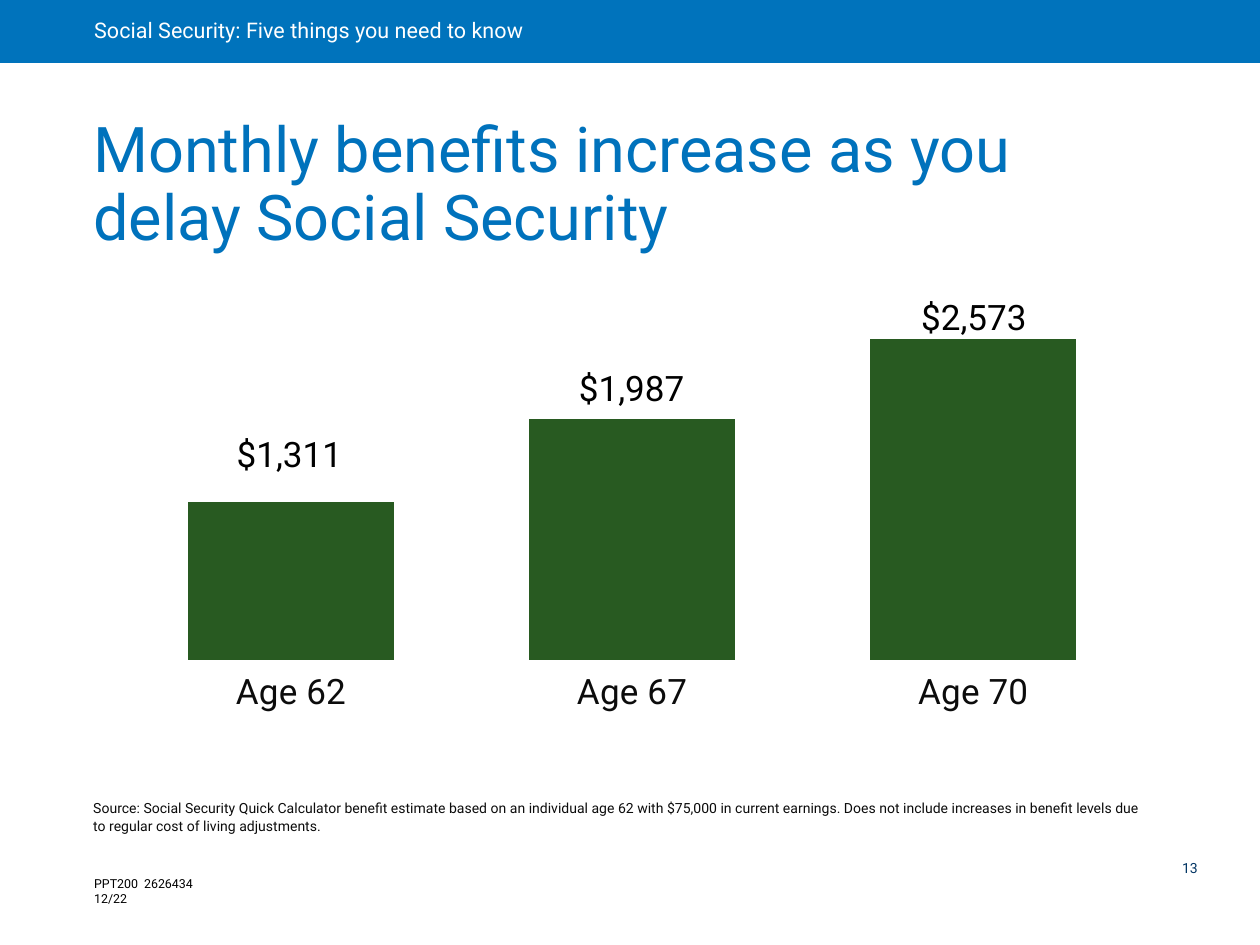
from pptx import Presentation
from pptx.chart.data import CategoryChartData as ChartData
from pptx.dml.color import RGBColor
from pptx.enum.chart import XL_CHART_TYPE as Kind, XL_TICK_LABEL_POSITION as Label, XL_TICK_MARK as Tick
from pptx.enum.shapes import MSO_SHAPE as Shape
from pptx.enum.text import MSO_ANCHOR as Anchor, PP_ALIGN as Align
from pptx.oxml import parse_xml
from pptx.oxml.ns import nsdecls, qn
from pptx.util import Cm, Pt

FACE = "Roboto"


def paint(fmt, hue):
    """Set a colour from a hex string."""
    fmt.rgb = RGBColor.from_string(hue)


def style(font, size, hue):
    """Set the face, size and colour of a font."""
    font.name, font.size = FACE, Pt(size)
    paint(font.color, hue)


def write(frame, lines, size, hue, pads, anchor=Anchor.TOP, align=Align.LEFT, lead=1.0):
    """Fill a text frame with one paragraph, broken into lines."""
    frame.word_wrap, frame.vertical_anchor = True, anchor
    frame.margin_left, frame.margin_top, frame.margin_right, frame.margin_bottom = map(Cm, pads)
    para = frame.paragraphs[0]
    para.alignment, para.line_spacing = align, lead
    for i, line in enumerate(lines):
        if i:
            para.add_line_break()
        run = para.add_run()
        run.text = line
        style(run.font, size, hue)


def note(slide, box, lines, size, hue, pads=(0.25, 0.13, 0.25, 0.13), **look):
    """Add a text box."""
    area = slide.shapes.add_textbox(*map(Cm, box))
    write(area.text_frame, lines, size, hue, pads, **look)


def banner(slide, box):
    """Draw the top band with the talk title."""
    band = slide.shapes.add_shape(Shape.RECTANGLE, *map(Cm, box))
    band.shadow.inherit = False
    band.fill.solid()
    paint(band.fill.fore_color, "0073BC")
    band.line.fill.background()
    write(band.text_frame, ["Social Security: Five things you need to know"], 12.3, "FFFFFF",
          (1.9, 0, 0.56, 0), anchor=Anchor.MIDDLE, lead=0.9)


def place(chart, **spot):
    """Fix the inner plot area as fractions of the chart."""
    plot = chart._chartSpace.find(qn("c:chart")).find(qn("c:plotArea"))
    for old in plot.findall(qn("c:layout")):
        plot.remove(old)
    parts = "".join(f'<c:{key} val="{val}"/>' for key, val in spot.items())
    plot.insert(0, parse_xml(
        f'<c:layout {nsdecls("c")}><c:manualLayout><c:layoutTarget val="inner"/>'
        f'<c:xMode val="edge"/><c:yMode val="edge"/>{parts}</c:manualLayout></c:layout>'))


def bars(slide, box):
    """Draw the benefit columns by claiming age and their amounts."""
    data = ChartData()
    data.categories = ["Age 62", "Age 67", "Age 70"]
    data.add_series("Series 1", (49, 75, 100))
    chart = slide.shapes.add_chart(Kind.COLUMN_STACKED, *map(Cm, box), data).chart
    chart.has_legend = chart.has_title = False
    style(chart.font, 14, "003463")
    chart.font.name = "TeX Gyre Schola"
    plot = chart.plots[0]
    plot.gap_width, plot.overlap, plot.vary_by_categories = 66, 100, False
    fill = plot.series[0].format.fill
    fill.solid()
    paint(fill.fore_color, "285A21")
    ages, sums = chart.category_axis, chart.value_axis
    for axis in (ages, sums):
        axis.has_major_gridlines = False
        axis.major_tick_mark = axis.minor_tick_mark = Tick.NONE
        axis.format.line.fill.background()
    ages.tick_label_position = Label.LOW
    style(ages.tick_labels.font, 20, "0C0C0C")
    sums.tick_label_position = Label.NONE
    sums.minimum_scale, sums.maximum_scale = 0, 110
    place(chart, x=0.02, y=0.04, w=0.96, h=0.81)
    left, top = box[:2]
    for i, (cash, drop) in enumerate((("$1,311", 2.75), ("$1,987", 1.43), ("$2,573", 0))):
        note(slide, (left + 1.76 + 6.9 * i, top + drop, 4.15, 1.11), [cash], 20, "000000",
             align=Align.CENTER)


def footer(slide, box):
    """Place the form number at the left and the page number at the right."""
    left, top, wide, high = box
    note(slide, (left, top + 0.26, 2.95, high - 0.26), ["PPT200  2626434", "12/22"], 7.1, "000000")
    note(slide, (left + wide - 1.27, top, 1.27, 0.53), ["13"], 8, "003463",
         (0.33, 0.1, 0.1, 0.1), lead=0.9)


def build():
    """Build and save the slide."""
    deck = Presentation()
    deck.slide_width, deck.slide_height = Cm(25.4), Cm(19.05)
    slide = deck.slides.add_slide(deck.slide_layouts[6])
    pads = (0.28, 0.15, 0.28, 0.15)
    banner(slide, (0, 0, 25.4, 1.27))
    note(slide, (1.6, 4.52, 21.9, 0.76), ["Monthly benefits increase as you delay Social Security"],
         36, "0072BC", pads, anchor=Anchor.BOTTOM, lead=0.9)
    bars(slide, (2, 5.83, 21.49, 8.79))
    note(slide, (1.6, 16.41, 21.9, 0.56),
         ["Source: Social Security Quick Calculator benefit estimate based on an individual age 62 "
          "with $75,000 in current earnings. Does not include increases in benefit levels due to "
          "regular cost of living adjustments."],
         8, "0C0C0C", pads, anchor=Anchor.BOTTOM, lead=1.1)
    footer(slide, (1.65, 17.27, 23.12, 1.12))
    deck.save("out.pptx")


if __name__ == "__main__":
    build()
